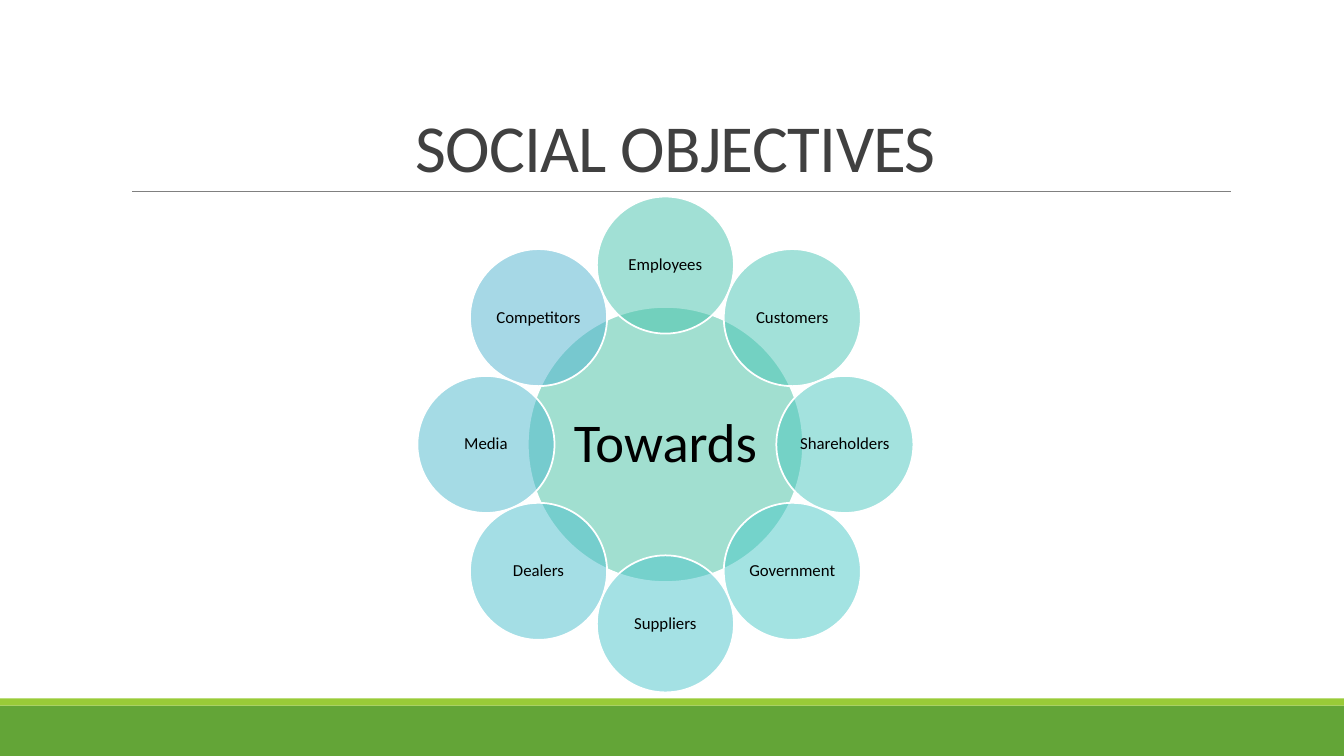
"""Builds the social objectives slide with a ring of stakeholder circles."""
import dataclasses
import math
import typing

import lxml.etree
import pptx
import pptx.dml.color
import pptx.enum.shapes
import pptx.enum.text
import pptx.oxml.ns
import pptx.shapes.autoshape
import pptx.slide
import pptx.util

Inches = pptx.util.Inches
MIDDLE = pptx.enum.text.MSO_ANCHOR.MIDDLE
BOTTOM = pptx.enum.text.MSO_ANCHOR.BOTTOM
RING_CENTER = (6.6, 4.41)
RING_RADIUS = 1.78
STAKEHOLDER_DIAMETER = 1.36
HUB_DIAMETER = 2.73


@dataclasses.dataclass(frozen=True)
class Circle:
    label: str
    color: str
    center: tuple[float, float]
    diameter: float
    size: float
    inset: float


@dataclasses.dataclass(frozen=True)
class Band:
    top: float
    height: float
    color: str


BANDS = [Band(7, 0.5, "63A537"), Band(6.93, 0.07, "99CB38")]
STAKEHOLDERS = [
    ("Employees", "45C3AC"),
    ("Customers", "46C5B5"),
    ("Shareholders", "48C6BE"),
    ("Government", "49C8C7"),
    ("Suppliers", "4AC4CA"),
    ("Dealers", "4BBECC"),
    ("Media", "4DB9CD"),
    ("Competitors", "4EB3CF"),
]


def rgb(value: str) -> pptx.dml.color.RGBColor:
    return pptx.dml.color.RGBColor.from_string(value)


def apply_format(target: typing.Any, values: dict[str, typing.Any]) -> None:
    for name, value in values.items():
        setattr(target, name, value)


def write_text(shape: pptx.shapes.autoshape.Shape, text: str, size: float, color: str,
               line_spacing: float, frame_format: dict[str, typing.Any]) -> None:
    apply_format(shape.text_frame, {"word_wrap": True, **frame_format})
    paragraph = shape.text_frame.paragraphs[0]
    apply_format(paragraph, {"alignment": pptx.enum.text.PP_ALIGN.CENTER,
                             "line_spacing": line_spacing})
    run = paragraph.add_run()
    run.text = text
    apply_format(run.font, {"name": "Calibri", "size": pptx.util.Pt(size)})
    run.font.color.rgb = rgb(color)


def add_filled_shape(slide: pptx.slide.Slide, kind: pptx.enum.shapes.MSO_SHAPE,
                     left: float, top: float, width: float, height: float,
                     color: str) -> pptx.shapes.autoshape.Shape:
    shape = slide.shapes.add_shape(kind, Inches(left), Inches(top),
                                   Inches(width), Inches(height))
    shape.shadow.inherit = False
    shape.fill.solid()
    shape.fill.fore_color.rgb = rgb(color)
    shape.line.fill.background()
    return shape


def add_band(slide: pptx.slide.Slide, band: Band) -> None:
    add_filled_shape(slide, pptx.enum.shapes.MSO_SHAPE.RECTANGLE,
                     0, band.top, 13.33, band.height, band.color)


def add_rule(slide: pptx.slide.Slide) -> None:
    rule = slide.shapes.add_connector(pptx.enum.shapes.MSO_CONNECTOR.STRAIGHT,
                                      Inches(1.31), Inches(1.9), Inches(12.21), Inches(1.9))
    rule.line.color.rgb = rgb("808080")
    rule.line.width = pptx.util.Pt(0.5)
    lxml.etree.SubElement(rule.element.spPr, pptx.oxml.ns.qn("a:effectLst"))


def add_title(slide: pptx.slide.Slide, text: str) -> None:
    title = slide.shapes.add_textbox(Inches(1.2), Inches(0.31), Inches(11), Inches(1.59))
    write_text(title, text, 48, "404040", 0.85, {"vertical_anchor": BOTTOM})
    for properties in title.element.iter(pptx.oxml.ns.qn("a:rPr")):
        properties.set("spc", "-50")


def add_circle(slide: pptx.slide.Slide, circle: Circle) -> None:
    left, top = (middle - circle.diameter / 2 for middle in circle.center)
    shape = add_filled_shape(slide, pptx.enum.shapes.MSO_SHAPE.OVAL, left, top,
                             circle.diameter, circle.diameter, circle.color)
    fill_color = shape.element.spPr.find(pptx.oxml.ns.qn("a:solidFill"))[0]
    lxml.etree.SubElement(fill_color, pptx.oxml.ns.qn("a:alpha"), val="50000")
    shape.line.color.rgb = rgb("FFFFFF")
    shape.line.width = pptx.util.Pt(1.25)
    margins = {f"margin_{side}": Inches(circle.inset)
               for side in ("left", "top", "right", "bottom")}
    write_text(shape, circle.label, circle.size, "000000", 0.9,
               {"vertical_anchor": MIDDLE, **margins})


def ring_circles() -> list[Circle]:
    circles = []
    for index, (label, color) in enumerate(STAKEHOLDERS):
        angle = math.tau * index / len(STAKEHOLDERS)
        center = (RING_CENTER[0] + RING_RADIUS * math.sin(angle),
                  RING_CENTER[1] - RING_RADIUS * math.cos(angle))
        circles.append(Circle(label, color, center, STAKEHOLDER_DIAMETER, 12, 0.02))
    return circles


def main() -> None:
    presentation = pptx.Presentation()
    apply_format(presentation, {"slide_width": Inches(13.33), "slide_height": Inches(7.5)})
    slide = presentation.slides.add_slide(presentation.slide_layouts[6])
    for band in BANDS:
        add_band(slide, band)
    add_rule(slide)
    add_title(slide, "SOCIAL OBJECTIVES")
    hub = Circle("Towards", "44C1A3", RING_CENTER, HUB_DIAMETER, 39, 0.05)
    for circle in [hub, *ring_circles()]:
        add_circle(slide, circle)
    presentation.save("out.pptx")


if __name__ == "__main__":
    main()
